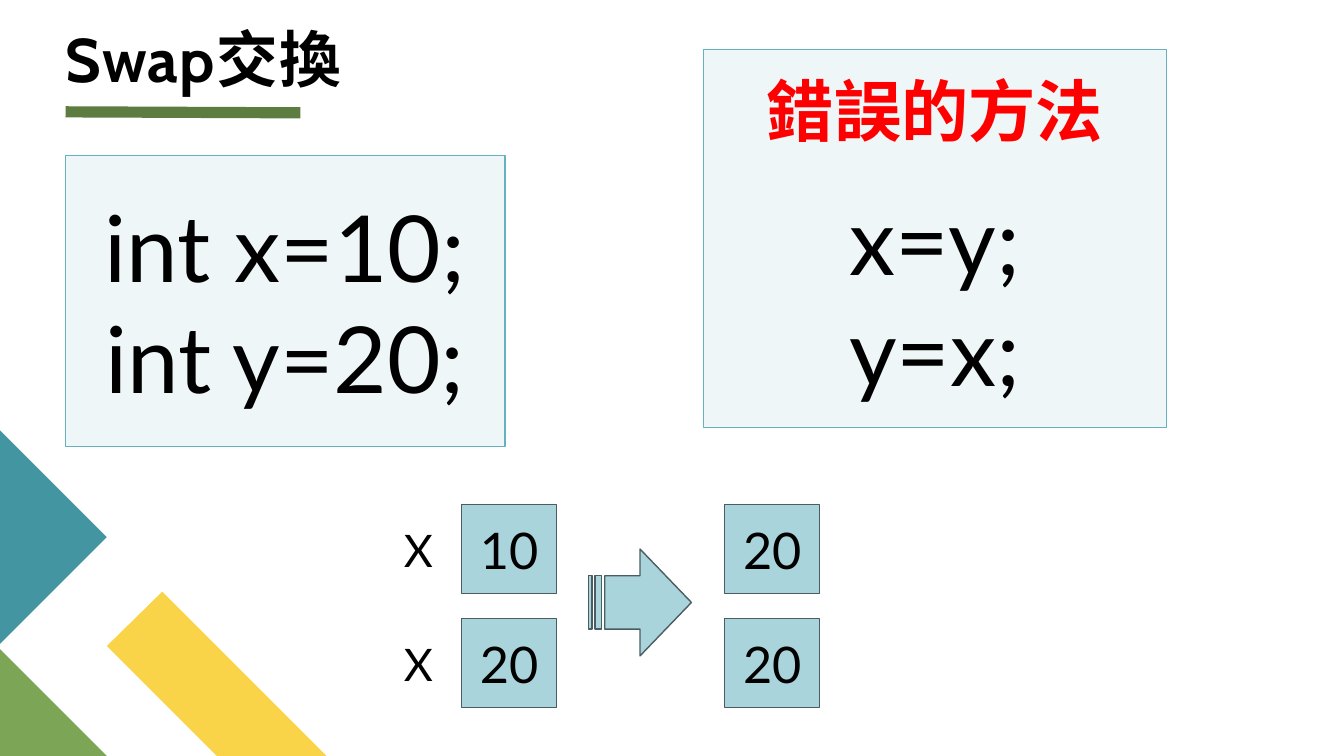
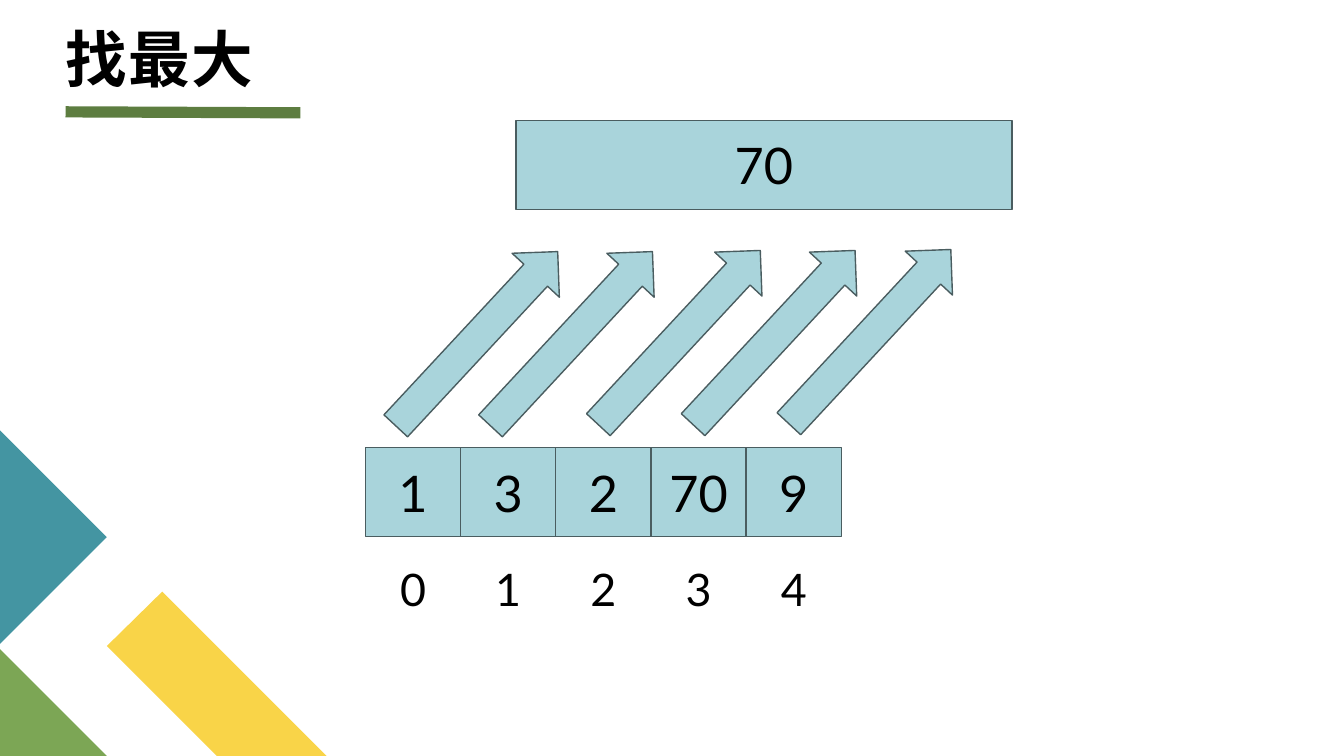
from collections import namedtuple
from dataclasses import dataclass

from lxml.etree import SubElement
from pptx import Presentation
from pptx.dml.color import RGBColor
from pptx.enum.shapes import MSO_CONNECTOR as Connector, MSO_SHAPE as Preset
from pptx.enum.text import MSO_ANCHOR as Anchor, MSO_AUTO_SIZE as AutoSize, PP_ALIGN as Align
from pptx.oxml.ns import qn
from pptx.util import Pt

Box = namedtuple("Box", "left top width height")


@dataclass(frozen=True)
class Theme:
    ink: str = "000000"
    warning: str = "FF0000"
    panel: str = "EEF6F8"
    panel_edge: str = "65B2BE"
    cell: str = "A9D4DB"
    cell_edge: str = "4A5D60"
    rule: str = "5D7D40"
    teal: str = "4495A2"
    green: str = "7CA655"
    yellow: str = "F9D448"
    title_font: str = "Cabin"
    body_font: str = "Lato"
    title_size: float = 44
    code_size: float = 66
    heading_size: float = 48
    cell_size: float = 36
    label_size: float = 32


THEME = Theme()
PAGE_WIDTH, PAGE_HEIGHT = 960, 540
CELL_WIDTH, CELL_HEIGHT = 68, 63.5
CODE_LINE = THEME.code_size * 1.2


def colour(value):
    return RGBColor.from_string(value)


def points(box):
    return [Pt(length) for length in box]


def style_font(para, size, color=THEME.ink, name=THEME.body_font, bold=False):
    font = para.font
    font.name, font.size, font.bold = name, Pt(size), bold
    font.color.rgb = colour(color)


def write_centred(frame, lines, size, **style):
    frame.word_wrap = True
    frame.vertical_anchor = Anchor.MIDDLE
    frame.text = "\n".join(lines)
    for para in frame.paragraphs:
        para.alignment = Align.CENTER
        style_font(para, size, **style)


def add_block(page, box, preset=Preset.RECTANGLE, fill=THEME.cell, edge=THEME.cell_edge):
    block = page.shapes.add_shape(preset, *points(box))
    block.shadow.inherit = False
    block.fill.solid()
    block.fill.fore_color.rgb = colour(fill)
    block.line.color.rgb = colour(edge)
    block.line.width = Pt(1)
    return block


def add_cell(page, box, value):
    write_centred(add_block(page, box).text_frame, [value], THEME.cell_size)


def add_panel(page, box, lines, space_above=0):
    panel = add_block(page, box, fill=THEME.panel, edge=THEME.panel_edge)
    panel.text_frame.margin_top = Pt(3.6 + space_above)
    write_centred(panel.text_frame, lines, THEME.code_size)


def add_label(page, box, text, size=THEME.label_size, **style):
    frame = page.shapes.add_textbox(*points(box)).text_frame
    frame.margin_left = frame.margin_right = 0
    write_centred(frame, [text], size, **style)


def add_polygon(page, corners, fill):
    (left, top), *others = [points(corner) for corner in corners]
    builder = page.shapes.build_freeform(left, top, scale=1.0)
    builder.add_line_segments(others, close=True)
    polygon = builder.convert_to_shape()
    polygon.shadow.inherit = False
    polygon.fill.solid()
    polygon.fill.fore_color.rgb = colour(fill)
    polygon.line.fill.background()
    return polygon


def decorate_layout(layout, page):
    """Draw the shared artwork on a page, then hand it to the layout."""
    rule = page.shapes.add_connector(Connector.STRAIGHT, *points((46.8, 79.9, 214.6, 80.6)))
    rule.line.color.rgb = colour(THEME.rule)
    rule.line.width = Pt(8)
    SubElement(rule.element.spPr, qn("a:effectLst"))

    edge, bottom = 76.3, PAGE_HEIGHT
    yellow = [(233.3, bottom), (154.8, bottom), (edge, 461.5), (115.9, 422.6)]
    green = [(0, bottom - edge), (edge, bottom), (0, bottom)]
    teal = [(0, 307.4), (edge, 307.4 + edge), (0, 307.4 + 2 * edge)]
    artwork = [
        rule,
        add_polygon(page, yellow, THEME.yellow),
        add_polygon(page, green, THEME.green),
        add_polygon(page, teal, THEME.teal),
    ]
    for number, shape in enumerate(artwork, start=20):
        shape.element.xpath(".//p:cNvPr")[0].set("id", str(number))
        layout.shapes.element.append(shape.element)


def add_title(page, text):
    title = page.shapes.title
    title.left, title.top, title.width, title.height = points((46.8, 8, 856, 59.7))
    frame = title.text_frame
    frame.text = text
    frame.auto_size = AutoSize.NONE
    frame.vertical_anchor = Anchor.BOTTOM
    frame.margin_left = frame.margin_top = frame.margin_right = frame.margin_bottom = 0
    para = frame.paragraphs[0]
    para.alignment = Align.LEFT
    para.line_spacing = 0.8
    style_font(para, THEME.title_size, name=THEME.title_font, bold=True)
    # Letter spacing of one point
    title.element.xpath(".//a:defRPr")[0].set("spc", "100")


def draw_wrong_method(page, box):
    add_panel(page, box, ["x=y;", "y=x;"], space_above=CODE_LINE)
    heading = Box(box.left, box.top + 10, box.width, 65.5)
    add_label(page, heading, "錯誤的方法", THEME.heading_size, color=THEME.warning, bold=True)


def draw_before_after(page, box):
    """Two rows of label, value before and value after, with an arrow between."""
    row_gap = box.height - CELL_HEIGHT
    before_left = box.left + 48.6
    after_left = box.left + box.width - CELL_WIDTH
    for row, (name, before, after) in enumerate([("X", "10", "20"), ("X", "20", "20")]):
        top = box.top + row * row_gap
        add_label(page, Box(box.left, top, 36, CELL_HEIGHT), name)
        for left, value in ((before_left, before), (after_left, after)):
            add_cell(page, Box(left, top, CELL_WIDTH, CELL_HEIGHT), value)
    arrow = Box(box.left + 139.5, box.top + 31.7, 73.4, 76.3)
    add_block(page, arrow, Preset.STRIPED_RIGHT_ARROW)


def draw_array(page, box, values):
    """A row of touching cells with an index under each."""
    width = box.width / len(values)
    for index, value in enumerate(values):
        left = box.left + index * width
        add_cell(page, Box(left, box.top, width, box.height), value)
        add_label(page, Box(left, box.top + 77.7, width, 46), str(index))


def draw_rising_arrows(page, box):
    """Slanted arrows from the array up to the result."""
    for offset, rise in ((0, 0), (67.7, 0), (144.7, 0.8), (212.4, 0.8), (280.8, 1.5)):
        arrow_box = Box(box.left + offset, box.top - rise, 46.1, box.height)
        add_block(page, arrow_box, Preset.UP_ARROW).rotation = 42.9


def build_swap(page):
    add_title(page, "Swap交換")
    add_panel(page, Box(46.8, 110.9, 313.9, 208.1), ["int x=10;", "int y=20;"])
    draw_wrong_method(page, Box(502.6, 35.3, 330.5, 270))
    draw_before_after(page, Box(281, 360.5, 304.6, 145))


def build_find_largest(page):
    add_title(page, "找最大")
    values = ["1", "3", "2", "70", "9"]
    draw_array(page, Box(261, 319.7, CELL_WIDTH * len(values), CELL_HEIGHT), values)
    add_cell(page, Box(368.6, 86, 354.2, CELL_HEIGHT), "70")
    draw_rising_arrows(page, Box(317.5, 157, 326.9, 169.9))


def main():
    deck = Presentation()
    deck.slide_width, deck.slide_height = Pt(PAGE_WIDTH), Pt(PAGE_HEIGHT)
    layout = deck.slide_layouts.get_by_name("Title Only")
    swap, find_largest = [deck.slides.add_slide(layout) for _ in range(2)]
    decorate_layout(layout, swap)
    build_swap(swap)
    build_find_largest(find_largest)
    deck.save("out.pptx")


if __name__ == "__main__":
    main()
